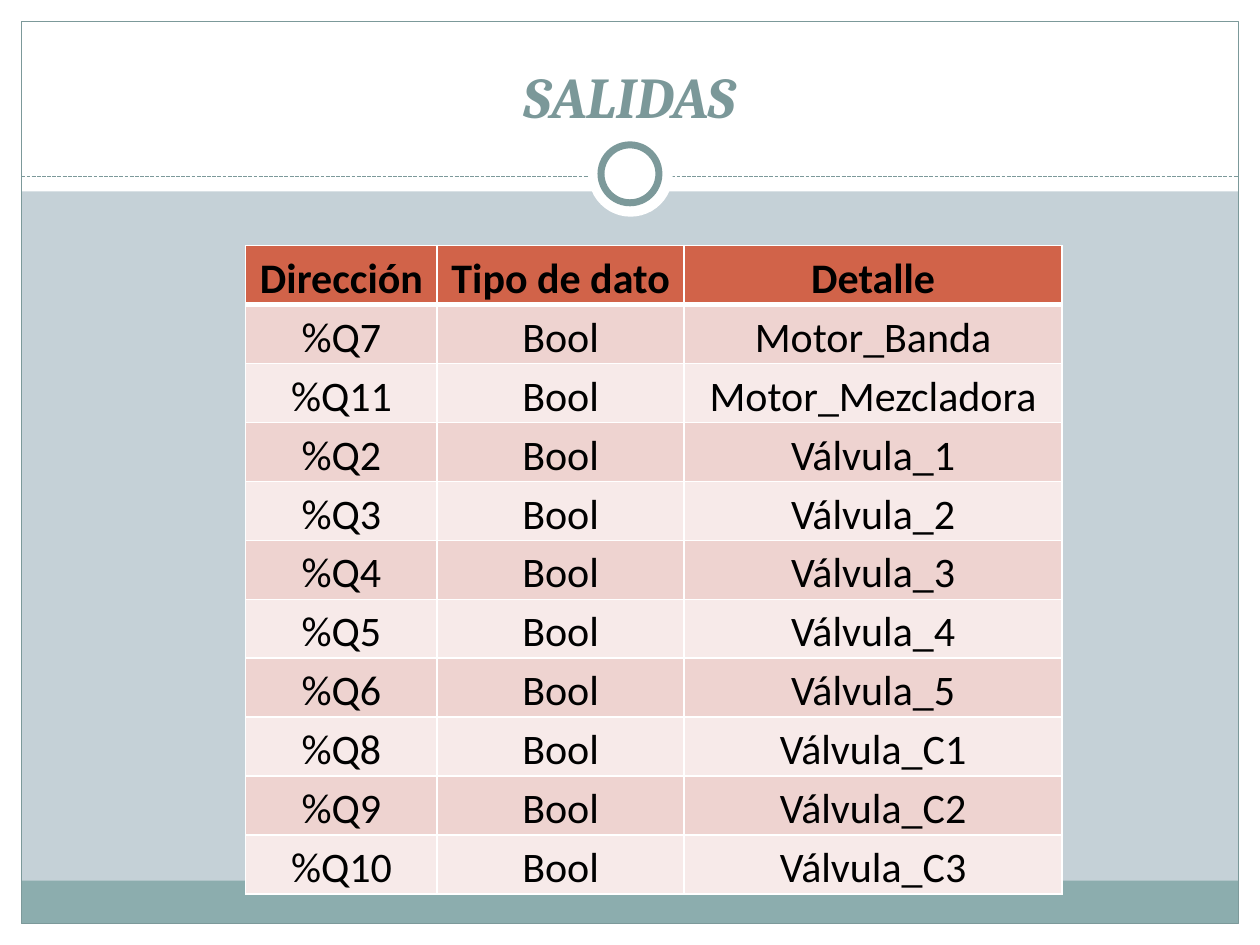
from pptx import Presentation
from pptx.dml.color import RGBColor
from pptx.enum.dml import MSO_LINE
from pptx.enum.shapes import MSO_CONNECTOR, MSO_SHAPE
from pptx.enum.text import MSO_ANCHOR, PP_ALIGN
from pptx.oxml.ns import qn
from pptx.util import Inches, Pt
from lxml import etree

RECT, OVAL = MSO_SHAPE.RECTANGLE, MSO_SHAPE.OVAL
STRAIGHT, DASH = MSO_CONNECTOR.STRAIGHT, MSO_LINE.SQUARE_DOT
CENTER, BOTTOM = PP_ALIGN.CENTER, MSO_ANCHOR.BOTTOM

# Content
TITLE = "SALIDAS"
HEAD = ("Dirección", "Tipo de dato", "Detalle")
OUTPUTS = [
    ("%Q7", "Motor_Banda"),
    ("%Q11", "Motor_Mezcladora"),
    ("%Q2", "Válvula_1"),
    ("%Q3", "Válvula_2"),
    ("%Q4", "Válvula_3"),
    ("%Q5", "Válvula_4"),
    ("%Q6", "Válvula_5"),
    ("%Q8", "Válvula_C1"),
    ("%Q9", "Válvula_C2"),
    ("%Q10", "Válvula_C3"),
]
ROWS = [HEAD] + [(pin, "Bool", detail) for pin, detail in OUTPUTS]

# Theme
THEME = {
    "back": "C5D1D7", "white": "FFFFFF", "band": "8CADAE", "edge": "7C999A",
    "head": "D16349", "odd": "EED3D0", "even": "F7EAE9",
    "title": {"name": "Cambria", "size": Pt(33), "bold": True, "italic": True},
    "title_color": "7B9899",
    "cell": {"name": "Calibri", "size": Pt(24)},
    "cell_color": "000000",
}

# Layout
WIDE, HIGH, RIM = 10, 7.5, 0.17
RULE = 1.4
COLS, ROW = (1.52, 1.96, 3), 0.46
# kind, box, fill, line color, line width
FRAME = [
    (RECT, (0, HIGH - RIM, WIDE, RIM), "white", None, 0),
    (RECT, (0, 0, WIDE, 1.52), "white", None, 0),
    (RECT, (0, 0, RIM, HIGH), "white", None, 0),
    (RECT, (WIDE - RIM, 0, RIM, HIGH), "white", None, 0),
    (RECT, (RIM, 6.99, WIDE - 2 * RIM, 0.34), "band", None, 0),
    (RECT, (RIM, RIM, WIDE - 2 * RIM, HIGH - 2 * RIM), None, "edge", 0.75),
]
RING = [
    (OVAL, (4.67, 1.05, 0.67, 0.67), "white", None, 0),
    (OVAL, (4.77, 1.15, 0.46, 0.46), "white", "edge", 4),
]


def color(name):
    return RGBColor.from_string(THEME[name])


def paint(fill, name):
    if name:
        fill.solid()
        fill.fore_color.rgb = color(name)
    else:
        fill.background()


def draw(slide, parts):
    for kind, box, fill, line, width in parts:
        shape = slide.shapes.add_shape(kind, *map(Inches, box))
        shape.shadow.inherit = False
        paint(shape.fill, fill)
        paint(shape.line.fill, line)
        if line:
            shape.line.width = Pt(width)


def style(font, look, **more):
    for key, value in {**THEME[look], **more}.items():
        setattr(font, key, value)
    font.color.rgb = color(look + "_color")


def border(cell, base):
    """Put white lines around a cell, below its fill in the XML order."""
    props = cell.fill and cell._tc.get_or_add_tcPr()
    for spot, (side, width) in enumerate(zip("LRTB", (1, 1, 1, base))):
        line = etree.Element(qn(f"a:ln{side}"), w=str(Pt(width)))
        solid = etree.SubElement(line, qn("a:solidFill"))
        etree.SubElement(solid, qn("a:srgbClr"), val=THEME["white"])
        props.insert(spot, line)


def fill_cell(cell, text, row):
    first = row == 0
    look = {"vertical_anchor": BOTTOM,
            "margin_left": Inches(0.07), "margin_right": Inches(0.07),
            "margin_top": 0, "margin_bottom": 0}
    for key, value in look.items():
        setattr(cell, key, value)
    cell.text = text
    para = cell.text_frame.paragraphs[0]
    para.alignment, para.line_spacing = CENTER, 1.15
    style(para.runs[0].font, "cell", bold=first)
    paint(cell.fill, "head" if first else ("even", "odd")[row % 2])
    border(cell, 3 if first else 1)


def main():
    deck = Presentation()
    deck.slide_width, deck.slide_height = Inches(WIDE), Inches(HIGH)
    slide = deck.slides.add_slide(deck.slide_layouts[5])
    paint(slide.background.fill, "back")

    # Frame, dashed rule and ring
    draw(slide, FRAME)
    rule = slide.shapes.add_connector(
        STRAIGHT, *map(Inches, (RIM, RULE, WIDE - RIM, RULE)))
    paint(rule.line.fill, "edge")
    rule.line.width, rule.line.dash_style = Pt(0.75), DASH
    etree.SubElement(rule.element.spPr, qn("a:effectLst"))
    draw(slide, RING)

    # Title, raised above the frame
    title = slide.shapes.title
    slide.shapes.element.append(title.element)
    box = zip(("left", "top", "width", "height"), (0.33, 0.25, 9.33, 0.83))
    for key, value in box:
        setattr(title, key, Inches(value))
    title.text = TITLE
    title.text_frame.vertical_anchor = BOTTOM
    para = title.text_frame.paragraphs[0]
    para.alignment = CENTER
    style(para.runs[0].font, "title")

    # Table of outputs
    size = (1.95, 1.95, sum(COLS), ROW * len(ROWS))
    table = slide.shapes.add_table(
        len(ROWS), len(COLS), *map(Inches, size)).table
    for col, width in zip(table.columns, COLS):
        col.width = Inches(width)
    for r, row in enumerate(ROWS):
        table.rows[r].height = Inches(ROW)
        for c, text in enumerate(row):
            fill_cell(table.cell(r, c), text, r)

    deck.save("out.pptx")


if __name__ == "__main__":
    main()
